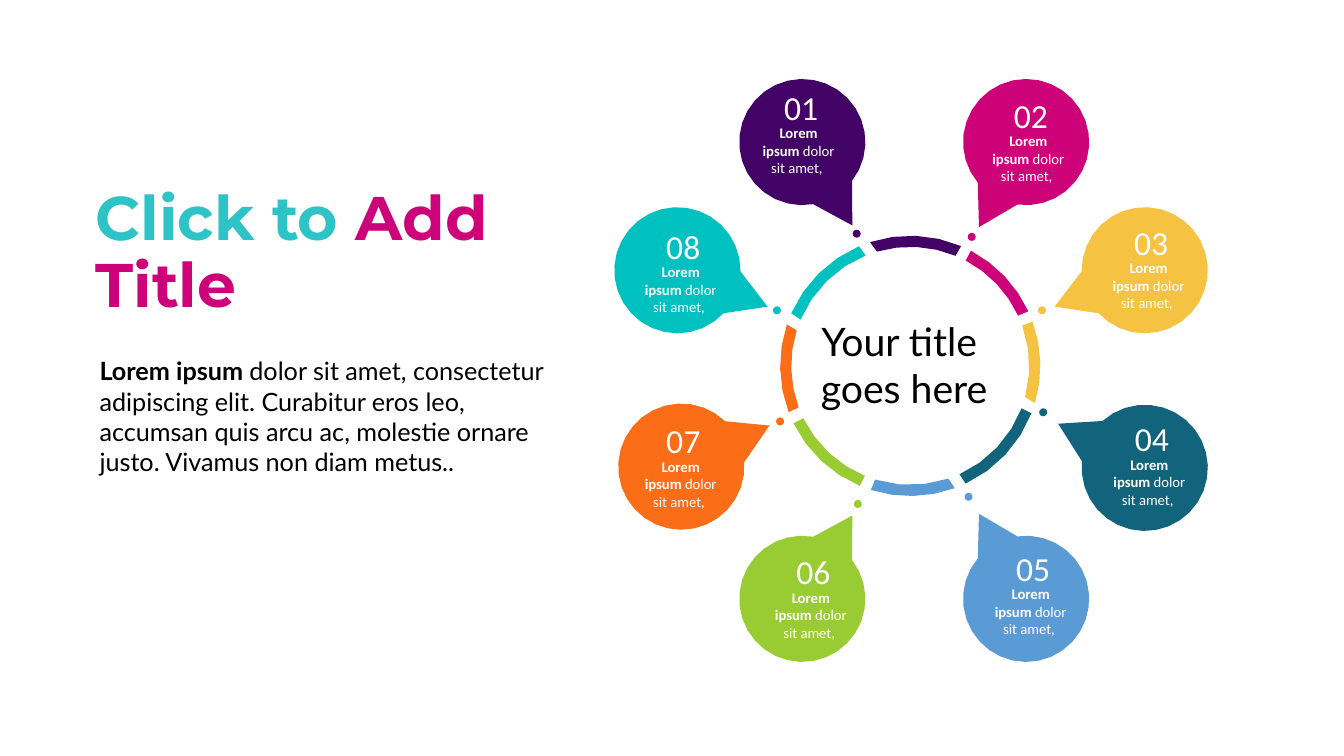
from dataclasses import dataclass
from math import ceil, cos, radians, sin

from pptx import Presentation
from pptx import util as u
from pptx.dml.color import RGBColor
from pptx.enum import shapes, text

Point = tuple[float, float]
Span = tuple[float, float]


@dataclass(frozen=True)
class Theme:
    teal: str = "2EC3C7"
    magenta: str = "CD0278"
    ink: str = "000000"
    white: str = "FFFFFF"
    heading_font: str = "Montserrat"
    body_font: str = "Lato"
    label_font: str = "Calibri"
    heading: float = 44
    centre: float = 28
    number: float = 24
    body: float = 18
    label: float = 10.5


@dataclass(frozen=True)
class Step:
    """One balloon with its dot and ring segment; lengths in cm, angles clockwise from east."""
    color: str
    centre: Point
    tip_angle: float
    dot: Point
    label: Point
    outer: Span
    inner: Span


@dataclass(frozen=True)
class Run:
    text: str
    font: str
    size: float
    color: str
    bold: bool = False


T = Theme()
RING_CENTRE: Point = (22.94, 9.22)
RING_OUTER, RING_INNER = 3.28, 3.0
BALLOON_RADIUS, TIP_REACH, TIP_HALF_ANGLE = 1.59, 2.45, 21
DOT_SIZE = 0.2
ARC_STEP = 12

STEPS = [
    Step("430266", (20.22, 3.58), 59, (21.59, 5.89), (18.92, 3.0), (252, 293), (253.7, 292.4)),
    Step("CD0278", (25.86, 3.58), 119, (24.49, 5.97), (24.71, 3.2), (297.8, 335.2), (297.8, 335)),
    Step("F6C242", (28.85, 6.81), 158, (26.26, 7.82), (27.74, 6.4), (340.2, 376.6), (340.2, 375.2)),
    Step("12637C", (28.85, 11.79), 207, (26.29, 10.39), (27.76, 11.35), (21.4, 64.8), (20.9, 65.6)),
    Step("5B9BD5", (25.86, 15.09), 241, (24.41, 12.52), (24.77, 14.61), (70, 107.6), (71.3, 107.2)),
    Step("99CC33", (20.22, 15.09), 301, (21.62, 12.7), (19.23, 14.71), (112.8, 153.8), (112.4, 153.9)),
    Step("FC6D17", (17.17, 11.76), 335, (19.66, 10.62), (15.95, 11.4), (159.2, 198.6), (159.6, 197.4)),
    Step("00C1BF", (17.07, 6.81), 22, (19.58, 7.82), (15.95, 6.5), (203.8, 246.8), (202.9, 248)),
]


def polar(centre: Point, radius: float, angle: float) -> Point:
    a = radians(angle)
    return centre[0] + radius * cos(a), centre[1] + radius * sin(a)


def arc(centre: Point, radius: float, start: float, end: float) -> list[Point]:
    n = ceil((end - start) / ARC_STEP)
    return [polar(centre, radius, start + (end - start) * i / n) for i in range(n + 1)]


def paint(sp, color: str) -> None:
    sp.shadow.inherit = False
    sp.fill.solid()
    sp.fill.fore_color.rgb = RGBColor.from_string(color)
    sp.line.fill.background()


def add_outline(s, points: list[Point], color: str) -> None:
    start, *rest = [(u.Cm(x), u.Cm(y)) for x, y in points]
    builder = s.shapes.build_freeform(*start)
    builder.add_line_segments(rest, close=True)
    paint(builder.convert_to_shape(), color)


def add_text(s, x: float, y: float, w: float, h: float, lines: list[list[Run]],
             align=text.PP_ALIGN.CENTER, spacing: float = 1.0, grow: bool = True) -> None:
    tf = s.shapes.add_textbox(u.Cm(x), u.Cm(y), u.Cm(w), u.Cm(h)).text_frame
    tf.word_wrap = True
    tf.auto_size = text.MSO_AUTO_SIZE.SHAPE_TO_FIT_TEXT if grow else text.MSO_AUTO_SIZE.NONE
    for i, runs in enumerate(lines):
        p = tf.add_paragraph() if i else tf.paragraphs[0]
        p.alignment = align
        p.line_spacing = spacing
        for run in runs:
            r = p.add_run()
            r.text = run.text
            r.font.name = run.font
            r.font.size = u.Pt(run.size)
            r.font.bold = run.bold
            r.font.color.rgb = RGBColor.from_string(run.color)


def add_balloon(s, step: Step) -> None:
    start = step.tip_angle + TIP_HALF_ANGLE
    end = step.tip_angle + 360 - TIP_HALF_ANGLE
    tip = polar(step.centre, TIP_REACH, step.tip_angle)
    add_outline(s, arc(step.centre, BALLOON_RADIUS, start, end) + [tip], step.color)


def add_segment(s, step: Step) -> None:
    outside = arc(RING_CENTRE, RING_OUTER, *step.outer)
    inside = arc(RING_CENTRE, RING_INNER, *step.inner)
    add_outline(s, outside + inside[::-1], step.color)


def add_dot(s, step: Step) -> None:
    x, y = (c - DOT_SIZE / 2 for c in step.dot)
    paint(s.shapes.add_shape(shapes.MSO_SHAPE.OVAL, u.Cm(x), u.Cm(y),
                             u.Cm(DOT_SIZE), u.Cm(DOT_SIZE)), step.color)


def add_label(s, step: Step, number: int) -> None:
    x, y = step.label
    add_text(s, x, y, 2.41, 1.6, [[
        Run("Lorem ipsum ", T.label_font, T.label, T.white, True),
        Run("dolor sit amet, ", T.label_font, T.label, T.white)]])
    add_text(s, x - 0.61, y - 0.94, 3.76, 1.27,
             [[Run(f"{number:02}", T.label_font, T.number, T.white)]])


def main() -> None:
    prs = Presentation()
    prs.slide_width, prs.slide_height = u.Cm(33.87), u.Cm(19.05)
    s = prs.slides.add_slide(prs.slide_layouts[6])

    # Wheel of eight steps
    for number, step in enumerate(STEPS, 1):
        add_balloon(s, step)
        add_segment(s, step)
        add_dot(s, step)
        add_label(s, step, number)

    # Centre title
    add_text(s, 20.32, 7.87, 4.93, 2.64, [
        [Run(line, T.body_font, T.centre, T.ink)] for line in ("Your title ", "goes here")])

    # Heading and body on the left
    add_text(s, 2.16, 4.6, 11.71, 4.22, [[
        Run("Click to ", T.heading_font, T.heading, T.teal, True),
        Run("Add Title", T.heading_font, T.heading, T.magenta, True)]],
        text.PP_ALIGN.LEFT, 0.9, grow=False)
    add_text(s, 2.26, 8.84, 11.71, 3.33, [[
        Run("Lorem ipsum ", T.body_font, T.body, T.ink, True),
        Run("dolor sit amet, consectetur adipiscing elit. Curabitur eros leo, accumsan quis "
            "arcu ac, molestie ornare justo. Vivamus non diam metus..",
            T.body_font, T.body, T.ink)]], text.PP_ALIGN.LEFT)

    prs.save("out.pptx")


if __name__ == "__main__":
    main()
